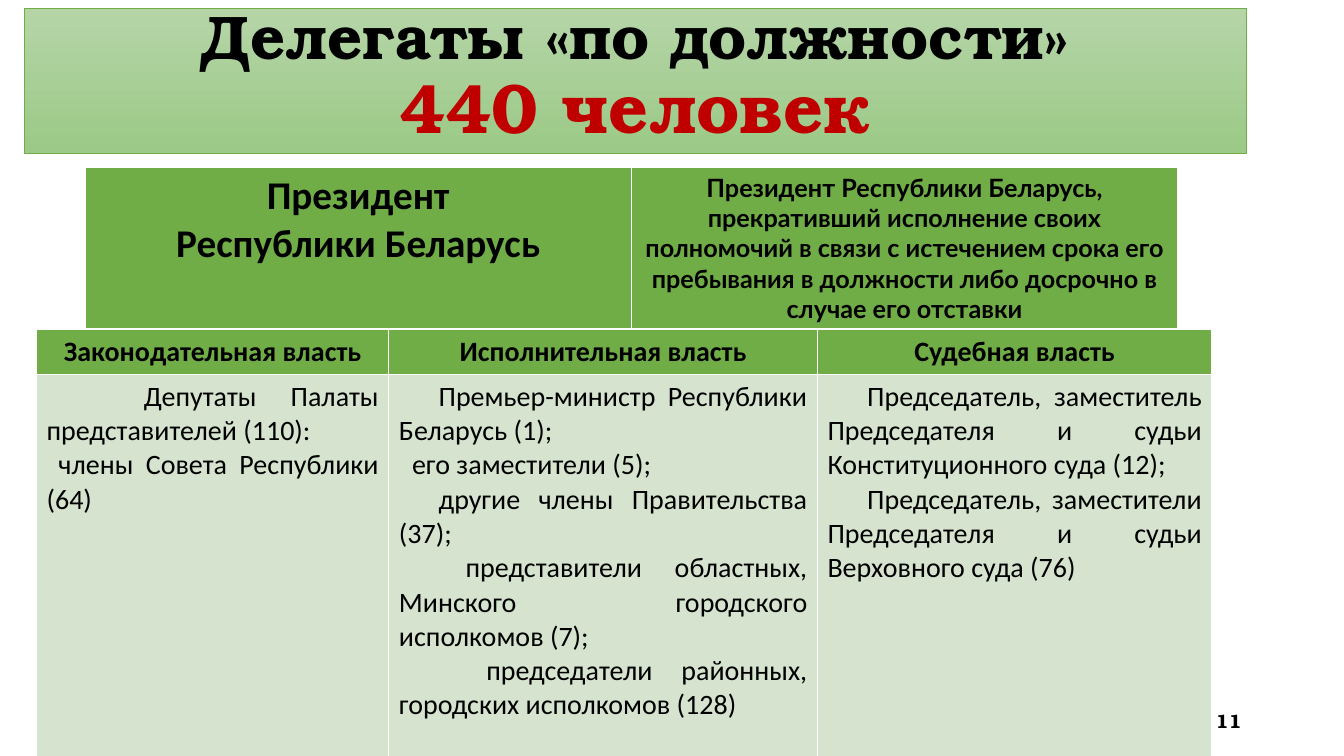
from pptx import Presentation
from pptx.dml.color import RGBColor
from pptx.enum import text as t
from pptx.util import Cm, Pt

GREEN = RGBColor(0x70, 0xAD, 0x47)
PALE = RGBColor(0xD5, 0xE3, 0xCF)
LIGHT = RGBColor(0xB5, 0xD5, 0xA7)
DEEP = RGBColor(0x9C, 0xC9, 0x87)
BLACK = RGBColor(0, 0, 0)
RED = RGBColor(0xC0, 0, 0)
SERIF = "TeX Gyre Bonum"
ALIGN = t.PP_ALIGN


def style(par, size, face, bold=True, align=ALIGN.CENTER):
    par.alignment = align
    for run in par.runs:
        font = run.font
        font.size, font.name, font.bold = Pt(size), face, bold
        font.color.rgb = BLACK


def add_grid(place, widths, heights):
    left, top = place
    grid = slide.shapes.add_table(
        len(heights), len(widths), Cm(left), Cm(top),
        Cm(sum(widths)), Cm(sum(heights))).table
    for col, width in zip(grid.columns, widths):
        col.width = Cm(width)
    for row, height in zip(grid.rows, heights):
        row.height = Cm(height)
    for cell in grid.iter_cells():
        cell.fill.solid()
        cell.fill.fore_color.rgb = GREEN
    return grid


prs = Presentation()
prs.slide_width, prs.slide_height = Cm(33.87), Cm(19.05)
slide = prs.slides.add_slide(prs.slide_layouts[5])

# Title banner
title = slide.shapes.title
title.left, title.top = Cm(0.62), Cm(0.2)
title.width, title.height = Cm(30.78), Cm(3.67)
title.fill.gradient()
title.fill.gradient_angle = 270
for stop, color, pos in zip(title.fill.gradient_stops, (LIGHT, DEEP), (0, 1)):
    stop.color.rgb, stop.position = color, pos
title.line.color.rgb = GREEN
title.line.width = Pt(0.5)
frame = title.text_frame
frame.text = "Делегаты «по должности»\v440 человек"
frame.auto_size = t.MSO_AUTO_SIZE.NONE
frame.vertical_anchor = t.MSO_ANCHOR.BOTTOM
head = frame.paragraphs[0]
head.line_spacing = 0.9
style(head, 44, SERIF)
count = head.runs[-1].font
count.size, count.color.rgb = Pt(50), RED

# Branches of power: heading, then (first-line indent in cm, text)
BRANCHES = [
    ("Законодательная власть", [
        (2.45, "Депутаты Палаты представителей (110):"),
        (0.3, "члены Совета Республики (64)")]),
    ("Исполнительная власть", [
        (1, "Премьер-министр Республики Беларусь (1);"),
        (0.33, "его заместители (5);"),
        (1, "другие члены Правительства (37);"),
        (1.68, "представители областных, Минского городского\vисполкомов (7);"),
        (2.2, "председатели районных, городских исполкомов (128)")]),
    ("Судебная власть", [
        (1, "Председатель, заместитель Председателя и судьи "
            "Конституционного суда (12);"),
        (1, "Председатель, заместители Председателя и судьи "
            "Верховного суда (76)")]),
]
powers = add_grid((0.92, 8.3), (8.88, 10.8, 9.94), (1.14, 9.65))
for col, (name, items) in enumerate(BRANCHES):
    top, body = powers.cell(0, col), powers.cell(1, col)
    top.text_frame.text = name
    style(top.text_frame.paragraphs[0], 20, "Calibri")
    body.fill.fore_color.rgb = PALE
    body.text_frame.text = "\n".join(line for _, line in items)
    for par, (indent, _) in zip(body.text_frame.paragraphs, items):
        style(par, 20, "Calibri", False, ALIGN.JUSTIFY)
        par._p.get_or_add_pPr().set("indent", str(Cm(indent)))

# Presidents
PRESIDENTS = [
    ("Президент\nРеспублики Беларусь", 28, "Calibri"),
    ("Президент Республики Беларусь, прекративший исполнение своих "
     "полномочий в связи с истечением срока его пребывания в должности "
     "либо досрочно в случае его отставки", 18, "Lato"),
]
chiefs = add_grid((2.14, 4.22), (13.77, 13.77), (4.06,))
for col, (words, size, face) in enumerate(PRESIDENTS):
    frame = chiefs.cell(0, col).text_frame
    frame.text = words
    for par in frame.paragraphs:
        style(par, size, face)

# Page number
page = slide.shapes.add_textbox(Cm(23.92), Cm(17.66), Cm(7.62), Cm(1.01))
frame = page.text_frame
frame.word_wrap = True
frame.vertical_anchor = t.MSO_ANCHOR.MIDDLE
frame.text = "11"
style(frame.paragraphs[0], 14, SERIF, align=ALIGN.RIGHT)

prs.save("out.pptx")
